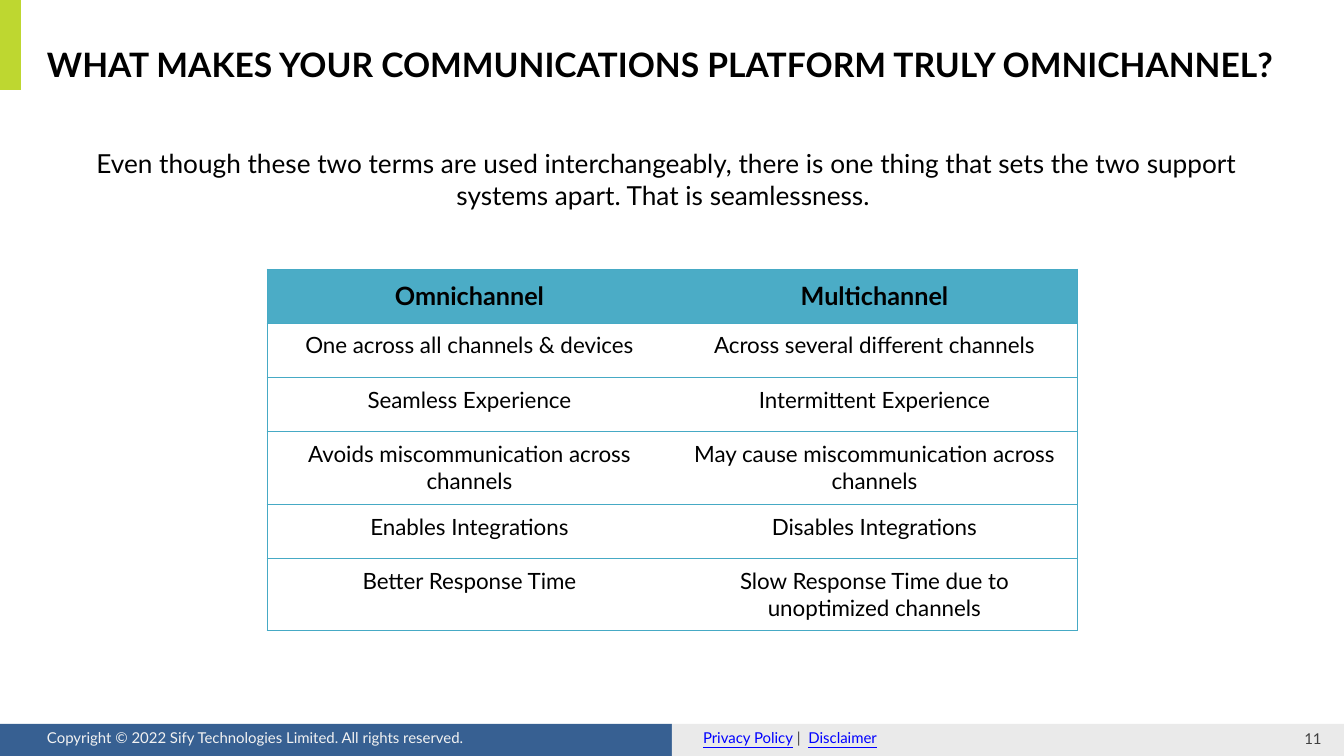
from typing import NamedTuple

from lxml import etree
from pptx import Presentation
from pptx import util as u
from pptx.dml.color import RGBColor
from pptx.enum import shapes, text
from pptx.oxml.ns import qn

PAGE_WIDTH, PAGE_HEIGHT = 1344, 756
EMU_PER_PX = 12192000 / PAGE_WIDTH
FONT = "Lato"
BLACK, GREY, LINK = "000000", "404040", "0000FF"
HEADER_FILL, RULE = "4BACC6", "46AAC5"


class Area(NamedTuple):
    left: int
    top: int
    width: int
    height: int


class Insets(NamedTuple):
    left: int
    top: int
    right: int
    bottom: int


class Bar(NamedTuple):
    area: Area
    fill: str


class Span(NamedTuple):
    words: str
    size: float
    color: str
    bold: bool = False
    underline: bool = False


class Label(NamedTuple):
    area: Area
    spans: list[Span]
    insets: Insets = Insets(10, 5, 10, 5)
    align: text.PP_ALIGN = text.PP_ALIGN.LEFT
    anchor: text.MSO_ANCHOR = text.MSO_ANCHOR.TOP


BARS = [
    Bar(Area(0, 724, 672, 32), "376092"),
    Bar(Area(672, 724, 672, 32), "EAEAEA"),
    Bar(Area(0, 0, 21, 90), "BED730"),
]
TITLE = Label(
    Area(47, 39, 1249, 51),
    [Span("WHAT MAKES YOUR COMMUNICATIONS PLATFORM TRULY OMNICHANNEL?", 24, BLACK, bold=True)],
    Insets(0, 5, 10, 5), anchor=text.MSO_ANCHOR.MIDDLE)
LABELS = [
    Label(Area(37, 724, 572, 28),
          [Span("Copyright © 2022 Sify Technologies Limited. All rights reserved.", 10.7, "F2F2F2")]),
    Label(Area(693, 724, 445, 28),
          [Span("Privacy Policy", 10.7, LINK, underline=True),
           Span(" |  ", 10.7, GREY),
           Span("Disclaimer", 10.7, LINK, underline=True)]),
    Label(Area(1276, 728, 61, 21), [Span("11", 10.7, GREY)],
          Insets(13, 7, 0, 7), text.PP_ALIGN.CENTER, text.MSO_ANCHOR.MIDDLE),
    Label(Area(63, 151, 1217, 56),
          [Span("Even though these two terms are used interchangeably, there is one thing "
                "that sets the two support systems apart. That is seamlessness. ", 18.7, BLACK)],
          Insets(0, 10, 10, 10), text.PP_ALIGN.CENTER, text.MSO_ANCHOR.MIDDLE),
]
TABLE_AREA = Area(267, 269, 810, 362)
ROW_HEIGHTS = [54, 55, 54, 73, 54, 72]
COMPARISON = [
    ("Omnichannel", "Multichannel"),
    ("One across all channels & devices", "Across several different channels"),
    ("Seamless Experience", "Intermittent Experience"),
    ("Avoids miscommunication across channels", "May cause miscommunication across channels"),
    ("Enables Integrations", "Disables Integrations"),
    ("Better Response Time", "Slow Response Time due to unoptimized channels"),
]


def px(length: int) -> u.Emu:
    return u.Emu(round(length * EMU_PER_PX))


def rgb(color: str) -> RGBColor:
    return RGBColor.from_string(color)


def emu_area(area: Area) -> list[u.Emu]:
    return [px(length) for length in area]


def set_insets(target, insets: Insets) -> None:
    """Set the margins of a text frame or a table cell."""
    target.margin_left, target.margin_top, target.margin_right, target.margin_bottom = map(px, insets)


def format_run(run, span: Span) -> None:
    font = run.font
    font.name, font.size = FONT, u.Pt(span.size)
    font.bold, font.underline = span.bold, span.underline
    font.color.rgb = rgb(span.color)


def draw_bar(page, bar: Bar) -> None:
    box = page.shapes.add_shape(shapes.MSO_SHAPE.RECTANGLE, *emu_area(bar.area))
    box.shadow.inherit = False
    box.fill.solid()
    box.fill.fore_color.rgb = rgb(bar.fill)
    box.line.fill.background()


def fill_label(box, label: Label) -> None:
    frame = box.text_frame
    frame.word_wrap = True
    frame.auto_size = text.MSO_AUTO_SIZE.NONE
    frame.vertical_anchor = label.anchor
    set_insets(frame, label.insets)
    para = frame.paragraphs[0]
    para.alignment = label.align
    for span in label.spans:
        run = para.add_run()
        run.text = span.words
        format_run(run, span)


def draw_title(page) -> None:
    box = page.shapes.title
    box.left, box.top, box.width, box.height = emu_area(TITLE.area)
    fill_label(box, TITLE)


def draw_label(page, label: Label) -> None:
    fill_label(page.shapes.add_textbox(*emu_area(label.area)), label)


def set_borders(cell, visible: dict[str, bool]) -> None:
    """Rule the named sides of a cell and clear the others."""
    properties = cell._tc.get_or_add_tcPr()
    for position, (side, shown) in enumerate(visible.items()):
        line = etree.Element(qn(f"a:ln{side}"), w=str(u.Pt(0.75)))
        if shown:
            fill = etree.SubElement(line, qn("a:solidFill"))
            etree.SubElement(fill, qn("a:srgbClr"), val=RULE)
        else:
            etree.SubElement(line, qn("a:noFill"))
        properties.insert(position, line)


def fill_cell(cell, words: str, is_header: bool) -> None:
    if is_header:
        cell.fill.solid()
        cell.fill.fore_color.rgb = rgb(HEADER_FILL)
        cell.vertical_anchor = text.MSO_ANCHOR.MIDDLE
        set_insets(cell, Insets(13, 7, 13, 7))
    else:
        cell.fill.background()
        set_insets(cell, Insets(9, 9, 9, 9))
    cell.text_frame.text = words
    para = cell.text_frame.paragraphs[0]
    para.alignment = text.PP_ALIGN.CENTER
    format_run(para.runs[0], Span(words, 18 if is_header else 16, BLACK, bold=is_header))


def draw_comparison(page) -> None:
    columns = len(COMPARISON[0])
    frame = page.shapes.add_table(len(COMPARISON), columns, *emu_area(TABLE_AREA))
    table = frame.table
    table.horz_banding = False
    for column in table.columns:
        column.width = px(TABLE_AREA.width // columns)
    for row_index, (height, row) in enumerate(zip(ROW_HEIGHTS, COMPARISON)):
        table.rows[row_index].height = px(height)
        for column_index, words in enumerate(row):
            cell = table.cell(row_index, column_index)
            fill_cell(cell, words, is_header=row_index == 0)
            set_borders(cell, {"L": column_index == 0, "R": column_index == columns - 1,
                               "T": True, "B": True})


def main() -> None:
    deck = Presentation()
    deck.slide_width, deck.slide_height = px(PAGE_WIDTH), px(PAGE_HEIGHT)
    page = deck.slides.add_slide(deck.slide_layouts.get_by_name("Title Only"))
    for bar in BARS:
        draw_bar(page, bar)
    draw_title(page)
    for label in LABELS:
        draw_label(page, label)
    draw_comparison(page)
    deck.save("out.pptx")


if __name__ == "__main__":
    main()
